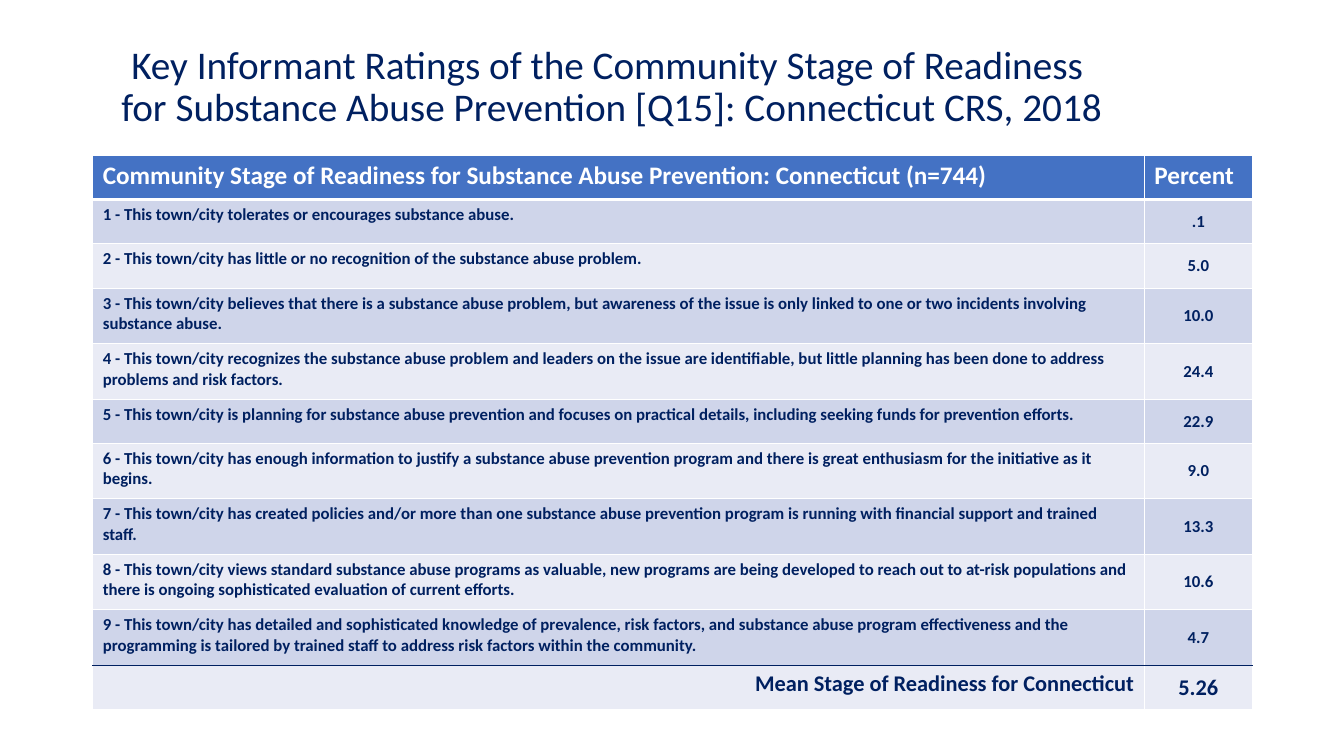
from dataclasses import dataclass

from lxml.etree import SubElement
from pptx import Presentation
from pptx.dml.color import RGBColor
from pptx.enum.text import MSO_ANCHOR, MSO_AUTO_SIZE, PP_ALIGN
from pptx.oxml.ns import qn
from pptx.shapes.autoshape import Shape
from pptx.slide import Slide
from pptx.table import _Cell
from pptx.text.text import _Paragraph
from pptx.util import Emu, Pt

EMU_PER_PX = 9144


@dataclass(frozen=True)
class Theme:
    font: str = "Calibri"
    navy: str = "002060"
    white: str = "FFFFFF"
    header: str = "4472C4"
    bands: tuple[str, str] = ("CFD5EA", "E9EBF5")
    title_size: int = 28
    header_size: int = 18
    stage_size: int = 12
    mean_size: int = 16
    rule: int = 1
    header_rule: int = 3


@dataclass(frozen=True)
class CellStyle:
    size: int
    color: str
    fill: str
    align: PP_ALIGN = PP_ALIGN.LEFT
    anchor: MSO_ANCHOR = MSO_ANCHOR.TOP
    margin_x: int = 10
    margin_y: int = 5


@dataclass(frozen=True)
class Border:
    color: str
    width: int


@dataclass(frozen=True)
class Stage:
    text: str
    percent: str
    height: int


THEME = Theme()
SHORT, TALL = 44, 55
COLUMNS = (1043, 107)
TITLE_LINES = (
    "Key Informant Ratings of the Community Stage of Readiness ",
    "for Substance Abuse Prevention [Q15]: Connecticut CRS, 2018",
)
HEADER = ("Community Stage of Readiness for Substance Abuse Prevention: Connecticut (n=744)", "Percent")
MEAN = ("Mean Stage of Readiness for Connecticut", "5.26")
STAGES = (
    Stage("tolerates or encourages substance abuse.", ".1", SHORT),
    Stage("has little or no recognition of the substance abuse problem.", "5.0", SHORT),
    Stage("believes that there is a substance abuse problem, but awareness of the issue is only "
          "linked to one or two incidents involving substance abuse.", "10.0", TALL),
    Stage("recognizes the substance abuse problem and leaders on the issue are identifiable, but "
          "little planning has been done to address problems and risk factors.", "24.4", TALL),
    Stage("is planning for substance abuse prevention and focuses on practical details, including "
          "seeking funds for prevention efforts.", "22.9", SHORT),
    Stage("has enough information to justify a substance abuse prevention program and there is "
          "great enthusiasm for the initiative as it begins.", "9.0", TALL),
    Stage("has created policies and/or more than one substance abuse prevention program is running "
          "with financial support and trained staff.", "13.3", TALL),
    Stage("views standard substance abuse programs as valuable, new programs are being developed to "
          "reach out to at-risk populations and there is ongoing sophisticated evaluation of current "
          "efforts.", "10.6", TALL),
    Stage("has detailed and sophisticated knowledge of prevalence, risk factors, and substance abuse "
          "program effectiveness and the programming is tailored by trained staff to address risk "
          "factors within the community.", "4.7", TALL),
)


def px(n: int) -> Emu:
    return Emu(n * EMU_PER_PX)


def add_run(p: _Paragraph, text: str, size: int, color: str, bold: bool) -> None:
    r = p.add_run()
    r.text = text
    r.font.name = THEME.font
    r.font.size = Pt(size)
    r.font.bold = bold
    r.font.color.rgb = RGBColor.from_string(color)


def format_title(sp: Shape) -> None:
    sp.left, sp.top, sp.width, sp.height = px(92), px(40), px(1029), px(145)
    tf = sp.text_frame
    tf.word_wrap = True
    tf.auto_size = MSO_AUTO_SIZE.NONE
    tf.vertical_anchor = MSO_ANCHOR.TOP
    p = tf.paragraphs[0]
    p.alignment = PP_ALIGN.CENTER
    p.line_spacing = 0.9
    for i, line in enumerate(TITLE_LINES):
        if i:
            p.add_line_break()
        add_run(p, line, THEME.title_size, THEME.navy, False)


def draw_border(cell: _Cell, side: str, border: Border) -> None:
    tc_pr = cell._tc.get_or_add_tcPr()
    ln = SubElement(tc_pr, qn(f"a:ln{side}"), w=str(Pt(border.width)))
    fill = SubElement(ln, qn("a:solidFill"))
    SubElement(fill, qn("a:srgbClr"), val=border.color)


def draw_cell(cell: _Cell, text: str, style: CellStyle, above: Border, below: Border) -> None:
    side = Border(THEME.white, THEME.rule)
    for name, border in (("L", side), ("R", side), ("T", above), ("B", below)):
        draw_border(cell, name, border)
    cell.fill.solid()
    cell.fill.fore_color.rgb = RGBColor.from_string(style.fill)
    cell.vertical_anchor = style.anchor
    cell.margin_left = cell.margin_right = px(style.margin_x)
    cell.margin_top = cell.margin_bottom = px(style.margin_y)
    p = cell.text_frame.paragraphs[0]
    p.alignment = style.align
    add_run(p, text, style.size, style.color, True)


def row_styles(row: int) -> tuple[CellStyle, CellStyle]:
    if row == 0:
        head = CellStyle(THEME.header_size, THEME.white, THEME.header)
        return head, head
    fill = THEME.bands[(row - 1) % 2]
    if row > len(STAGES):
        return (CellStyle(THEME.mean_size, THEME.navy, fill, PP_ALIGN.RIGHT),
                CellStyle(THEME.mean_size, THEME.navy, fill, PP_ALIGN.CENTER, MSO_ANCHOR.MIDDLE))
    return (CellStyle(THEME.stage_size, THEME.navy, fill),
            CellStyle(THEME.stage_size, THEME.navy, fill, PP_ALIGN.CENTER, MSO_ANCHOR.MIDDLE, 5, 0))


def draw_table(s: Slide) -> None:
    stages = [(f"{n} - This town/city {stage.text}", stage.percent) for n, stage in enumerate(STAGES, 1)]
    rows = [HEADER, *stages, MEAN]
    heights = [SHORT, *(stage.height for stage in STAGES), SHORT]
    plain = Border(THEME.white, THEME.rule)
    rules = [plain] * (len(rows) + 1)
    rules[1] = Border(THEME.white, THEME.header_rule)
    rules[-2] = Border(THEME.navy, THEME.rule)
    table = s.shapes.add_table(len(rows), len(COLUMNS), px(92), px(154),
                               px(sum(COLUMNS)), px(sum(heights))).table
    for column, width in zip(table.columns, COLUMNS):
        column.width = px(width)
    for i, (texts, height) in enumerate(zip(rows, heights)):
        table.rows[i].height = px(height)
        for j, (text, style) in enumerate(zip(texts, row_styles(i))):
            draw_cell(table.cell(i, j), text, style, rules[i], rules[i + 1])


def main() -> None:
    prs = Presentation()
    prs.slide_width, prs.slide_height = px(1333), px(750)
    s = prs.slides.add_slide(prs.slide_layouts.get_by_name("Title Only"))
    format_title(s.shapes.title)
    draw_table(s)
    prs.save("out.pptx")


if __name__ == "__main__":
    main()
